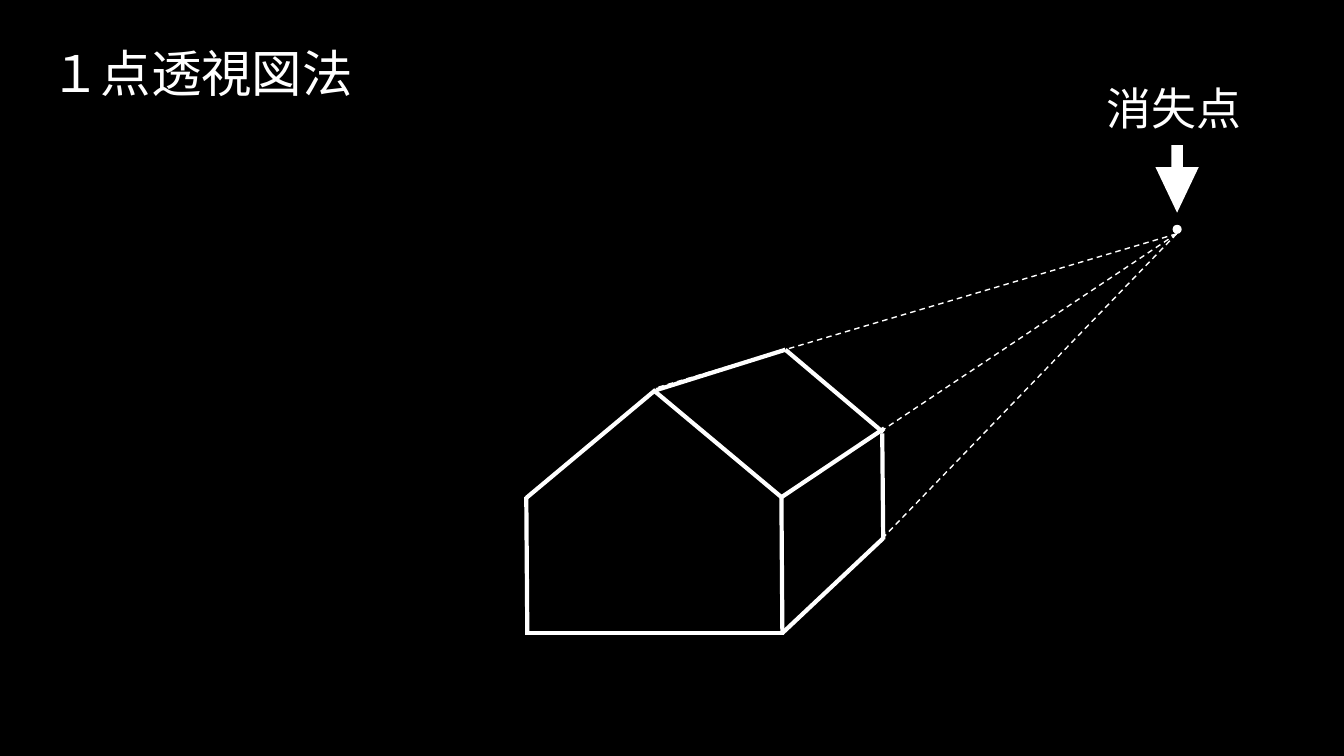
"""One-point perspective: a house whose depth edges run to a vanishing point."""
import lxml.etree
import pptx
import pptx.dml.color
import pptx.enum.dml
import pptx.enum.shapes
import pptx.enum.text
import pptx.oxml.ns
import pptx.util

PX = 9144
FONT = "Noto Sans CJK JP"
BLACK = pptx.dml.color.RGBColor(0x00, 0x00, 0x00)
WHITE = pptx.dml.color.RGBColor(0xFF, 0xFF, 0xFF)
SHAPES = pptx.enum.shapes.MSO_SHAPE
ALIGN = pptx.enum.text.PP_ALIGN
qn = pptx.oxml.ns.qn

deck = pptx.Presentation()
deck.slide_width, deck.slide_height = 1333 * PX, 750 * PX
page = deck.slides.add_slide(deck.slide_layouts[6])
page.background.fill.solid()
page.background.fill.fore_color.rgb = BLACK


def add_line(start, end, width, dash=None):
    line = page.shapes.add_connector(
        pptx.enum.shapes.MSO_CONNECTOR.STRAIGHT, *[value * PX for value in start + end]
    )
    line.line.color.rgb = WHITE
    line.line.width = pptx.util.Pt(width)
    if dash:
        line.line.dash_style = dash
    lxml.etree.SubElement(line._element.spPr, qn("a:effectLst"))


vanishing_point = (1167, 232)
for corner in [(650, 385), (854, 556), (776, 493)]:
    add_line(vanishing_point, corner, 1, pptx.enum.dml.MSO_LINE.DASH)

house_edges = [
    ((778, 628), (521, 628)),
    ((775, 493), (776, 629)),
    ((876, 534), (776, 628)),
    ((875, 430), (876, 535)),
    ((522, 493), (523, 629)),
    ((650, 387), (522, 494)),
    ((648, 387), (776, 494)),
    ((651, 387), (779, 347)),
    ((877, 425), (774, 494)),
    ((779, 347), (876, 429)),
]
for start, end in house_edges:
    add_line(start, end, 3)

markers = [
    (SHAPES.OVAL, (1163, 223, 9, 9), []),
    (SHAPES.DOWN_ARROW, (1146, 144, 43, 67), [0.262, 1.053]),
]
for kind, place, adjustments in markers:
    marker = page.shapes.add_shape(kind, *[value * PX for value in place])
    for index, value in enumerate(adjustments):
        marker.adjustments[index] = value
    marker.shadow.inherit = False
    marker.fill.solid()
    marker.fill.fore_color.rgb = WHITE
    marker.line.fill.background()

labels = [
    ("１点透視図法", (40, 37, 343, 71), 36, ALIGN.LEFT),
    ("消失点", (1088, 75, 159, 64), 32, ALIGN.JUSTIFY),
]
for text, place, size, alignment in labels:
    box = page.shapes.add_textbox(*[value * PX for value in place])
    box.text_frame.word_wrap = True
    box.text_frame.auto_size = pptx.enum.text.MSO_AUTO_SIZE.SHAPE_TO_FIT_TEXT
    para = box.text_frame.paragraphs[0]
    para.text = text
    para.alignment = alignment
    para.font.size = pptx.util.Pt(size)
    para.font.color.rgb = WHITE
    para.font.name = FONT
    defaults = para._p.pPr.find(qn("a:defRPr"))
    lxml.etree.SubElement(defaults, qn("a:ea"), typeface=FONT)

deck.save("out.pptx")
